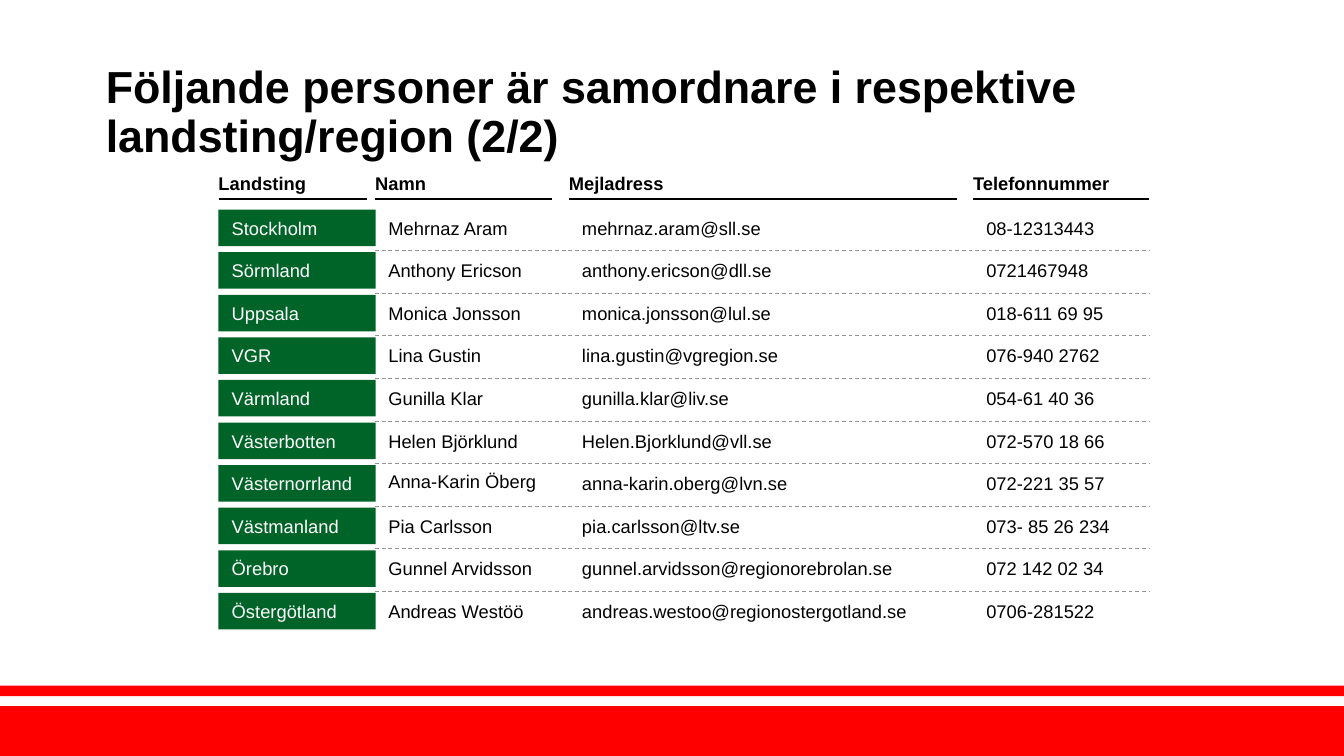
from lxml import etree
from pptx import Presentation
from pptx.dml.color import RGBColor
from pptx.enum import dml, shapes, text
from pptx.oxml import ns
from pptx.util import Cm, Pt

TITLE = "Följande personer är samordnare i respektive landsting/region (2/2)"
# heading, left, heading width, cell width (cm)
COLUMNS = [
    ("Landsting", 4.13, 2.8, 2.97),
    ("Namn", 7.09, 3.35, 3.35),
    ("Mejladress", 10.75, 7.34, 7.34),
    ("Telefonnummer", 18.39, 3.33, 3.33),
]
COORDINATORS = [
    ("Stockholm", "Mehrnaz Aram", "mehrnaz.aram@sll.se", "08-12313443"),
    ("Sörmland", "Anthony Ericson", "anthony.ericson@dll.se", "0721467948"),
    ("Uppsala", "Monica Jonsson", "monica.jonsson@lul.se", "018-611 69 95"),
    ("VGR", "Lina Gustin", "lina.gustin@vgregion.se", "076-940 2762"),
    ("Värmland", "Gunilla Klar", "gunilla.klar@liv.se", "054-61 40 36"),
    ("Västerbotten", "Helen Björklund", "Helen.Bjorklund@vll.se", "072-570 18 66"),
    ("Västernorrland", "Anna-Karin Öberg", "anna-karin.oberg@lvn.se", "072-221 35 57"),
    ("Västmanland", "Pia Carlsson", "pia.carlsson@ltv.se", "073- 85 26 234"),
    ("Örebro", "Gunnel Arvidsson", "gunnel.arvidsson@regionorebrolan.se", "072 142 02 34"),
    ("Östergötland", "Andreas Westöö", "andreas.westoo@regionostergotland.se", "0706-281522"),
]
RAISED = {"Anna-Karin Öberg": 0.05}
FOOTER_BANDS = [(12.95, 0.2), (13.34, 0.94)]  # top, height

BLACK = RGBColor(0x00, 0x00, 0x00)
WHITE = RGBColor(0xFF, 0xFF, 0xFF)
RED = RGBColor(0xFF, 0x00, 0x00)
GREEN = RGBColor(0x00, 0x64, 0x28)
GREY = RGBColor(0x94, 0x94, 0x94)

SLIDE_WIDTH, SLIDE_HEIGHT = 25.4, 14.28
HEADING_TOP, HEADING_HEIGHT, HEADING_RULE = 3.25, 0.41, 3.76
FIRST_ROW, LAST_ROW, ROW_HEIGHT = 3.96, 11.2, 0.69
ROW_STEP = (LAST_ROW - FIRST_ROW) / (len(COORDINATORS) - 1)
TEXT_SIZE = 9.8

prs = Presentation()
prs.slide_width, prs.slide_height = Cm(SLIDE_WIDTH), Cm(SLIDE_HEIGHT)
slide = prs.slides.add_slide(prs.slide_layouts[6])


def add_block(left, top, width, height, color):
    block = slide.shapes.add_shape(
        shapes.MSO_SHAPE.RECTANGLE, Cm(left), Cm(top), Cm(width), Cm(height))
    block.shadow.inherit = False
    block.fill.solid()
    block.fill.fore_color.rgb = color
    block.line.fill.background()
    return block


def add_label(left, top, width, height):
    return slide.shapes.add_textbox(Cm(left), Cm(top), Cm(width), Cm(height))


def write(holder, wording, color=BLACK, size=TEXT_SIZE, bold=False):
    frame = holder.text_frame
    frame.word_wrap = True
    frame.vertical_anchor = text.MSO_ANCHOR.MIDDLE
    paragraph = frame.paragraphs[0]
    paragraph.alignment = text.PP_ALIGN.LEFT
    run = paragraph.add_run()
    run.text = wording
    run.font.name = "Arial"
    run.font.size = Pt(size)
    run.font.bold = bold
    run.font.color.rgb = color
    return frame


def add_rule(left, right, y, color, weight, dash=None):
    """Draw a horizontal line without a shadow."""
    rule = slide.shapes.add_connector(
        shapes.MSO_CONNECTOR.STRAIGHT, Cm(left), Cm(y), Cm(right), Cm(y))
    rule.line.color.rgb = color
    rule.line.width = Pt(weight)
    if dash:
        rule.line.dash_style = dash
    etree.SubElement(rule._element.spPr, ns.qn("a:effectLst"))


for top, height in FOOTER_BANDS:
    add_block(0, top, SLIDE_WIDTH, height, RED)

title = write(add_label(1.75, 0.76, 21.9, 2.77), TITLE, size=24, bold=True)
title.paragraphs[0].line_spacing = 0.9

for heading, left, width, _ in COLUMNS:
    frame = write(add_label(left, HEADING_TOP, width, HEADING_HEIGHT), heading, bold=True)
    frame.vertical_anchor = text.MSO_ANCHOR.BOTTOM
    frame.margin_left = frame.margin_right = frame.margin_top = frame.margin_bottom = 0
    add_rule(left, left + width, HEADING_RULE, BLACK, 0.75)

rules_left = COLUMNS[1][1]
rules_right = COLUMNS[-1][1] + COLUMNS[-1][2]
for row, coordinator in enumerate(COORDINATORS):
    top = FIRST_ROW + row * ROW_STEP
    for column, (wording, (_, left, _, width)) in enumerate(zip(coordinator, COLUMNS)):
        if column == 0:
            write(add_block(left, top, width, ROW_HEIGHT, GREEN), wording, WHITE)
        else:
            cell_top = top - RAISED.get(wording, 0)
            write(add_label(left, cell_top, width, ROW_HEIGHT), wording)
    if row < len(COORDINATORS) - 1:
        add_rule(rules_left, rules_right, top + ROW_STEP - 0.03, GREY, 0.5,
                 dml.MSO_LINE.DASH)

prs.save("out.pptx")
